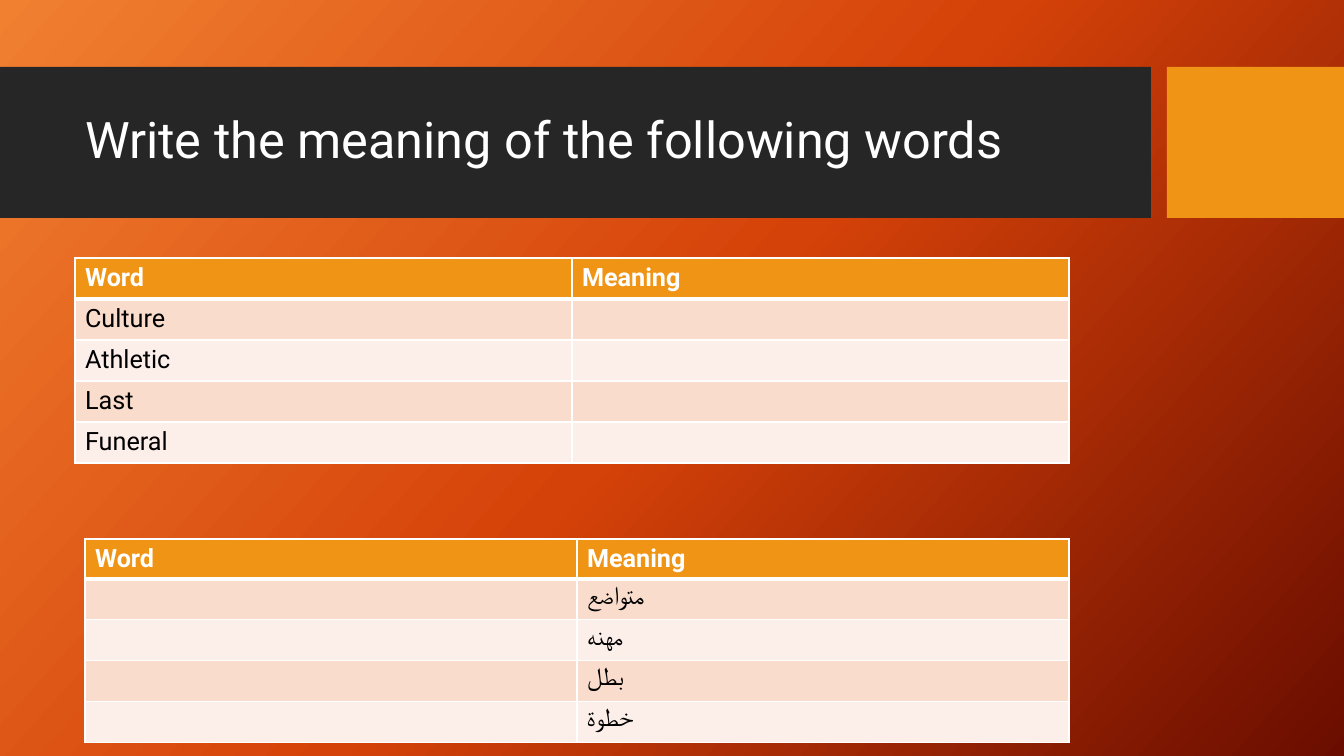
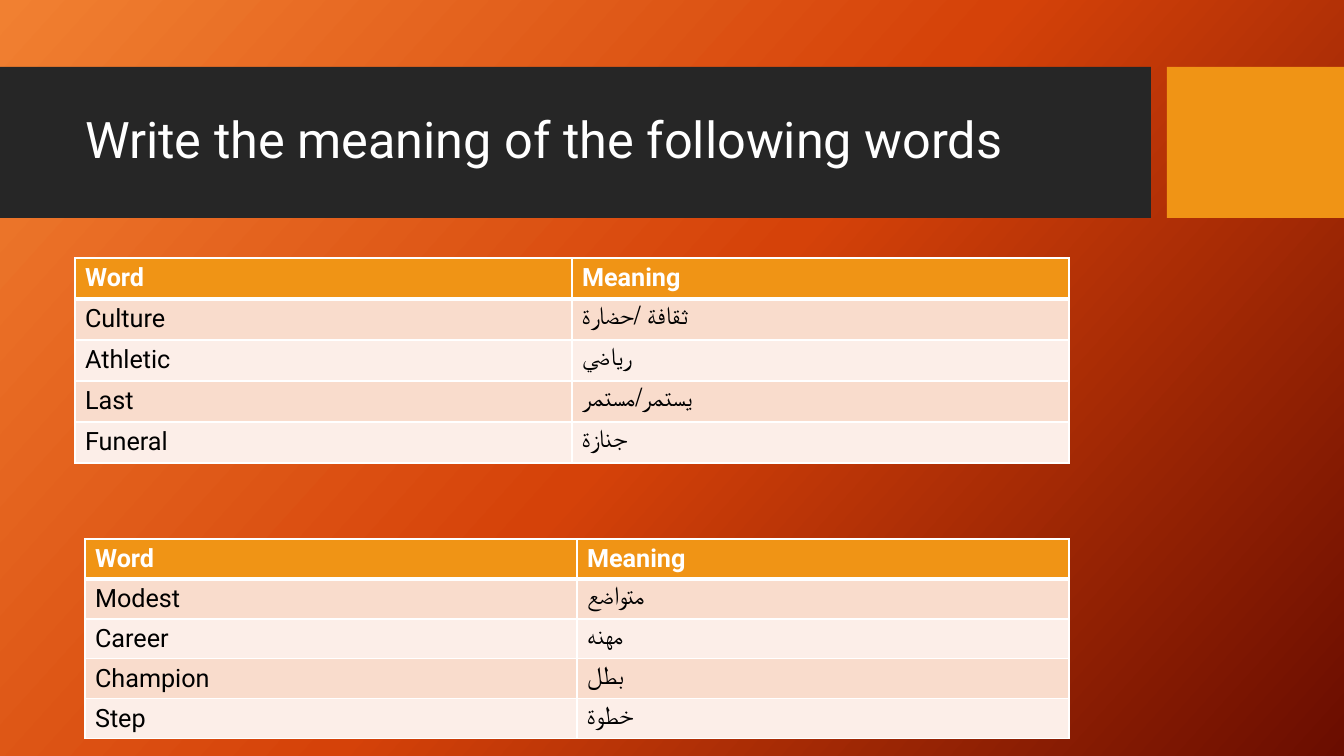
from copy import deepcopy

from lxml.etree import SubElement
from pptx import Presentation
from pptx.dml.color import RGBColor
from pptx.enum.shapes import MSO_SHAPE
from pptx.enum.text import MSO_ANCHOR, MSO_AUTO_SIZE, PP_ALIGN
from pptx.oxml.ns import qn
from pptx.util import Emu, Pt

PAGE_WIDTH, PAGE_HEIGHT = 1344, 756
EMU_PER_PX = 12192000 / PAGE_WIDTH

FONT = "Roboto"
WHITE = RGBColor(0xFF, 0xFF, 0xFF)
BLACK = RGBColor(0x00, 0x00, 0x00)
CHARCOAL = RGBColor(0x26, 0x26, 0x26)
AMBER = RGBColor(0xF0, 0x94, 0x15)
ROW_TINTS = (RGBColor(0xF9, 0xDC, 0xCC), RGBColor(0xFC, 0xEE, 0xE8))
BACKGROUND_STOPS = (
    (0, RGBColor(0xF1, 0x80, 0x31)),
    (0.5, RGBColor(0xD5, 0x42, 0x09)),
    (1, RGBColor(0x6A, 0x0D, 0x00)),
)
BACKGROUND_ANGLE = 42

TITLE = "Write the meaning of the following words"
TITLE_BOX = (75, 83, 1059, 119)
BANDS = (((0, 67, 1151, 151), CHARCOAL), ((1167, 67, 177, 151), AMBER))
HEADINGS = ("Word", "Meaning")
UPPER_BOX = (75, 258, 994, 205)
LOWER_BOX = (85, 539, 984, 200)

UPPER_WORDS = (
    ("Culture", "ثقافة /حضارة"),
    ("Athletic", "رياضي"),
    ("Last", "يستمر/مستمر"),
    ("Funeral", "جنازة"),
)
LOWER_WORDS = (
    ("Modest", "متواضع"),
    ("Career", "مهنه"),
    ("Champion", "بطل"),
    ("Step", "خطوة"),
)


def px(length):
    return Emu(round(length * EMU_PER_PX))


def add_text(para, text, size, color, bold=False):
    span = para.add_run()
    span.text = text
    span.font.name = FONT
    span.font.size = Pt(size)
    span.font.bold = bold
    span.font.color.rgb = color


def paint_background(master):
    fill = master.background.fill
    fill.gradient()
    stop_list = master.element.xpath("./p:cSld/p:bg//a:gsLst")[0]
    stop_list.append(deepcopy(stop_list[0]))
    for stop, (position, color) in zip(fill.gradient_stops, BACKGROUND_STOPS):
        stop.position = position
        stop.color.rgb = color
    # python-pptx measures the angle counter-clockwise
    fill.gradient_angle = 360 - BACKGROUND_ANGLE


def add_bands(layout, page):
    """Draw the bands on a page, then move them to the layout all pages share."""
    for placeholder in list(layout.placeholders)[1:]:
        placeholder.element.getparent().remove(placeholder.element)
    tree = layout.shapes.element
    for index, (box, color) in enumerate(BANDS):
        band = page.shapes.add_shape(MSO_SHAPE.RECTANGLE, *map(px, box))
        band.shadow.inherit = False
        band.fill.solid()
        band.fill.fore_color.rgb = color
        band.line.fill.background()
        tree.insert(2 + index, band.element)


def set_title(page):
    title = page.shapes.title
    title.left, title.top, title.width, title.height = map(px, TITLE_BOX)
    frame = title.text_frame
    frame.word_wrap = True
    frame.auto_size = MSO_AUTO_SIZE.NONE
    frame.vertical_anchor = MSO_ANCHOR.MIDDLE
    para = frame.paragraphs[0]
    para.alignment = PP_ALIGN.LEFT
    para.line_spacing = 0.9
    add_text(para, TITLE, 36, WHITE)


def set_borders(cell, top, bottom):
    """Give a cell white edges; top and bottom are widths in points."""
    properties = cell._tc.get_or_add_tcPr()
    for edge, width in (("lnL", 1), ("lnR", 1), ("lnT", top), ("lnB", bottom)):
        line = SubElement(properties, qn(f"a:{edge}"), w=str(Pt(width)))
        fill = SubElement(line, qn("a:solidFill"))
        SubElement(fill, qn("a:srgbClr"), val=str(WHITE))


def add_word_table(page, box, words):
    rows = (HEADINGS, *words)
    table = page.shapes.add_table(len(rows), len(HEADINGS), *map(px, box)).table
    for column in table.columns:
        column.width = px(box[2] / len(HEADINGS))
    for index, texts in enumerate(rows):
        table.rows[index].height = px(box[3] / len(rows))
        is_header = index == 0
        for column, text in enumerate(texts):
            cell = table.cell(index, column)
            set_borders(cell, 3 if index == 1 else 1, 3 if is_header else 1)
            cell.fill.solid()
            cell.fill.fore_color.rgb = AMBER if is_header else ROW_TINTS[(index - 1) % 2]
            if text:
                para = cell.text_frame.paragraphs[0]
                add_text(para, text, 18, WHITE if is_header else BLACK, is_header)


def fill_word_page(page, upper_words, lower_words):
    set_title(page)
    add_word_table(page, UPPER_BOX, upper_words)
    add_word_table(page, LOWER_BOX, lower_words)


def main():
    deck = Presentation()
    deck.slide_width, deck.slide_height = px(PAGE_WIDTH), px(PAGE_HEIGHT)
    layout = deck.slide_layouts.get_by_name("Title Only")
    questions, answers = (deck.slides.add_slide(layout) for _ in range(2))
    paint_background(deck.slide_master)
    add_bands(layout, questions)

    fill_word_page(
        questions,
        [(word, "") for word, _ in UPPER_WORDS],
        [("", meaning) for _, meaning in LOWER_WORDS],
    )
    fill_word_page(answers, UPPER_WORDS, LOWER_WORDS)
    deck.save("out.pptx")


if __name__ == "__main__":
    main()
